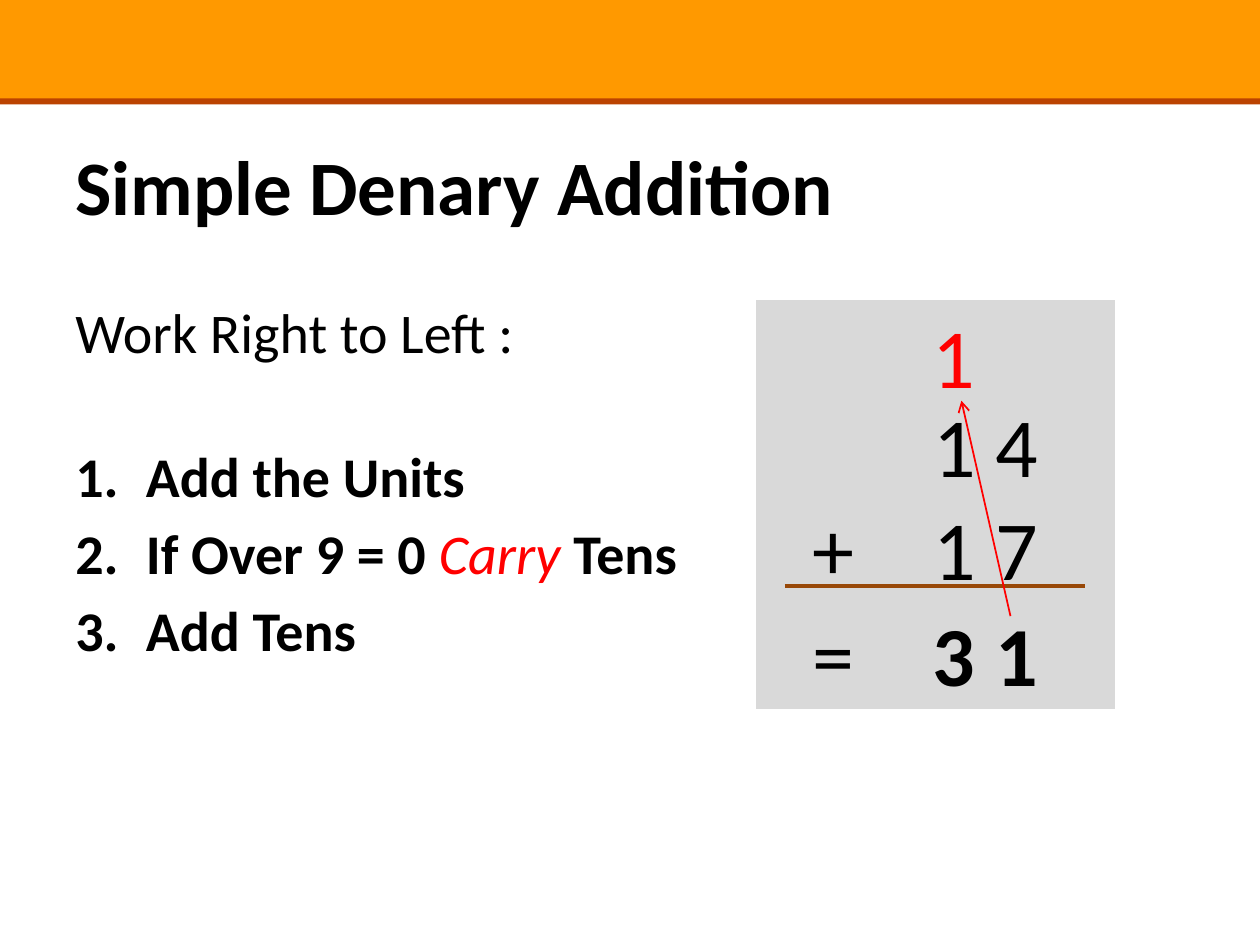
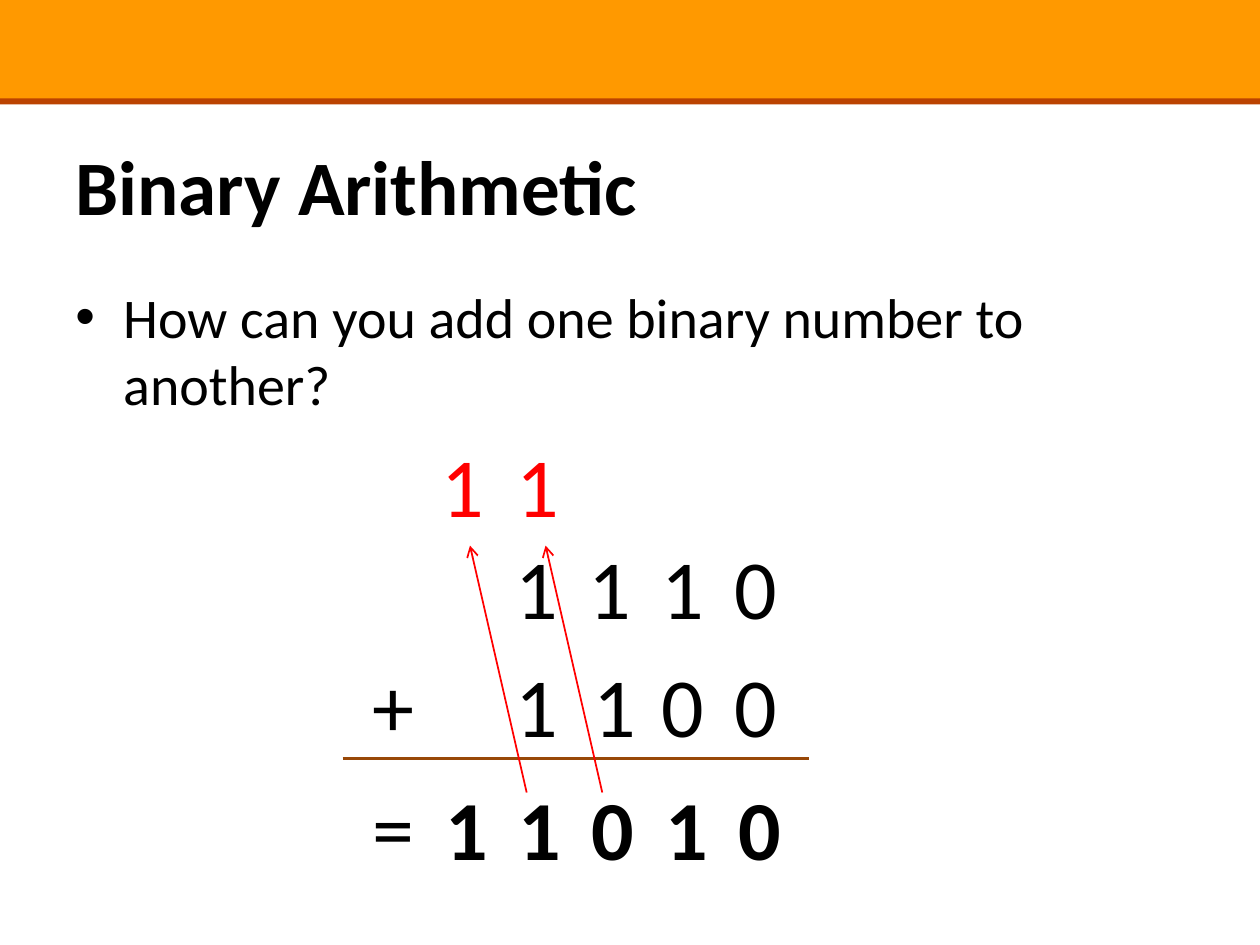
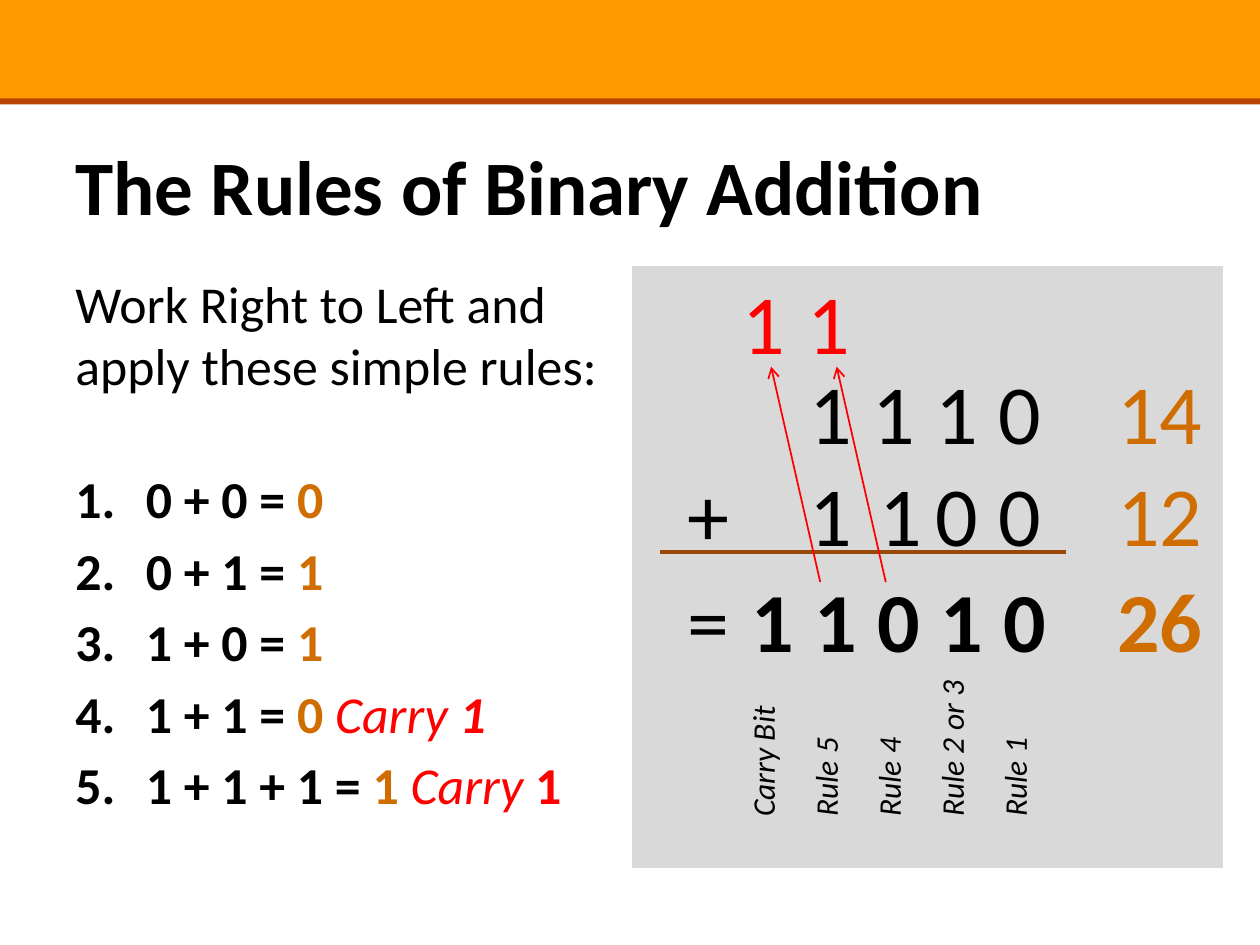
from dataclasses import dataclass

from lxml import etree
from pptx import Presentation
from pptx.dml.color import RGBColor
from pptx.enum import shapes, text
from pptx.oxml import ns
from pptx.util import Inches, Pt


@dataclass(frozen=True)
class Theme:
    font: str = "Calibri"
    black: str = "000000"
    red: str = "FF0000"
    amber: str = "D06D00"
    rule: str = "984807"
    panel: str = "D9D9D9"
    white: str = "FFFFFF"
    band: str = "FF9900"
    edge: str = "BB4301"
    title: float = 44
    body: float = 32
    small: float = 29.6
    digit: float = 48
    label: float = 18


T = Theme()

# Run styles: colour, bold, italic
PLAIN = (T.black, False, False)
BOLD = (T.black, True, False)
SLANT = (T.black, False, True)
SUM = (T.amber, True, False)
DENARY = (T.amber, False, False)
RED = (T.red, False, False)
CARRY = (T.red, False, True)
RED_BOLD = (T.red, True, False)
RED_BOTH = (T.red, True, True)


def style(run, size, look):
    font = run.font
    font.name, font.size = T.font, Pt(size)
    font.color.rgb = RGBColor.from_string(look[0])
    font.bold, font.italic = look[1:]


def box(slide, x, y, w, h, wrap=True):
    frame = slide.shapes.add_textbox(
        Inches(x), Inches(y), Inches(w), Inches(h)).text_frame
    frame.word_wrap = wrap
    if not wrap:
        frame.auto_size = text.MSO_AUTO_SIZE.SHAPE_TO_FIT_TEXT
    return frame


def rect(slide, x, y, w, h, fill, line=None):
    shape = slide.shapes.add_shape(
        shapes.MSO_SHAPE.RECTANGLE, Inches(x), Inches(y), Inches(w), Inches(h))
    shape.shadow.inherit = False
    shape.fill.solid()
    shape.fill.fore_color.rgb = RGBColor.from_string(fill)
    if line:
        shape.line.color.rgb = RGBColor.from_string(line)
        shape.line.width = Pt(2)
    else:
        shape.line.fill.background()


def line(slide, x1, y1, x2, y2, color, width):
    link = slide.shapes.add_connector(
        shapes.MSO_CONNECTOR.STRAIGHT,
        Inches(x1), Inches(y1), Inches(x2), Inches(y2))
    link.line.color.rgb = RGBColor.from_string(color)
    link.line.width = Pt(width)
    etree.SubElement(link._element.spPr, ns.qn("a:effectLst"))
    return link


def arrow(slide, x1, y1, x2, y2):
    link = line(slide, x1, y1, x2, y2, T.red, 1)
    etree.SubElement(link.line._get_or_add_ln(), ns.qn("a:tailEnd"), type="arrow")


def page(deck, title):
    """Blank slide with the shared band and title."""
    slide = deck.slides.add_slide(deck.slide_layouts[6])
    rect(slide, -0.04, 0.77, 10.06, 0.06, T.edge)
    rect(slide, -0.04, -0.01, 10.06, 0.79, T.band)
    frame = box(slide, 0.5, 1.05, 9, 1.25)
    frame.text = title
    style(frame.paragraphs[0].runs[0], T.title, BOLD)
    return slide


def mark(para, indent, tag, **attrs):
    """Hanging bullet or number."""
    props = para._p.get_or_add_pPr()
    props.set("marL", str(Inches(indent)))
    props.set("indent", str(-Inches(indent)))
    if tag == "a:buChar":
        etree.SubElement(props, ns.qn("a:buFont"), typeface="Arial")
    etree.SubElement(props, ns.qn(tag), **attrs)


def steps(slide, y, w, h, size, intro, items, gap):
    """Opening line followed by a numbered list."""
    frame = box(slide, 0.5, y, w, h)
    frame.text = intro
    first = frame.paragraphs[0]
    first.space_after = Pt(gap)
    style(first.runs[0], size, PLAIN)
    for item in items:
        para = frame.add_paragraph()
        para.space_before = Pt(size * 0.18)
        mark(para, 0.56, "a:buAutoNum", type="arabicPeriod")
        for words, look in item:
            run = para.add_run()
            run.text = words
            style(run, size, look)


def cell(slide, words, x, y, w, h, look=PLAIN):
    frame = box(slide, x, y, w, h, wrap=False)
    frame.text = words
    para = frame.paragraphs[0]
    para.alignment = text.PP_ALIGN.CENTER
    style(para.runs[0], T.digit, look)


def row(slide, digits, x, y, step, w, h, look=PLAIN):
    """Digits in equal columns; a space leaves its column free."""
    for i, digit in enumerate(digits):
        if digit != " ":
            cell(slide, digit, x + i * step, y, w, h, look)


def label(slide, words, x, base, length):
    """Label that reads upwards from its base."""
    frame = box(slide, x, base - length, 0.5, length, wrap=False)
    frame._txBody.bodyPr.set("vert", "vert270")
    frame.text = words
    style(frame.paragraphs[0].runs[0], T.label, SLANT)


def denary(deck):
    slide = page(deck, "Simple Denary Addition")
    steps(slide, 2.31, 5.13, 3.25, T.body, "Work Right to Left :", [
        [("Add the Units", BOLD)],
        [("If Over 9 = 0 ", BOLD), ("Carry", CARRY), (" Tens", BOLD)],
        [("Add Tens", BOLD)],
    ], 38)
    rect(slide, 5.99, 2.37, 2.87, 3.27, T.panel, T.white)
    row(slide, "14", 7.31, 3.07, 0.49, 0.54, 0.91)
    row(slide, "17", 7.31, 3.89, 0.49, 0.54, 0.91)
    row(slide, "31", 7.3, 4.73, 0.5, 0.54, 0.91, BOLD)
    cell(slide, "+", 6.35, 3.89, 0.45, 0.84)
    cell(slide, "=", 6.35, 4.73, 0.45, 0.84)
    line(slide, 6.23, 4.65, 8.61, 4.65, T.rule, 2.25)
    cell(slide, "1", 7.3, 2.37, 0.54, 0.91, RED)
    arrow(slide, 8.02, 4.89, 7.63, 3.18)


def binary(deck):
    slide = page(deck, "Binary Arithmetic")
    frame = box(slide, 0.5, 2.19, 9, 1.25)
    frame.text = "How can you add one binary number to another?"
    mark(frame.paragraphs[0], 0.38, "a:buChar", char="•")
    style(frame.paragraphs[0].runs[0], T.body, PLAIN)

    step = 0.58
    row(slide, "1110", 3.97, 4.2, step, 0.58, 0.97)
    row(slide, "1 00", 3.97, 5.14, step, 0.58, 0.97)
    cell(slide, "1", 4.61, 5.14, 0.46, 0.78)
    row(slide, "11010", 3.44, 6.11, step, 0.46, 0.78, BOLD)
    cell(slide, "+", 2.86, 5.14, 0.52, 0.97)
    cell(slide, "=", 2.86, 6.11, 0.52, 0.97)
    line(slide, 2.72, 6.02, 6.42, 6.02, T.rule, 2.25)
    row(slide, "11", 3.36, 3.39, 0.59, 0.63, 1.05, RED)
    for x in (4.18, 4.78):
        arrow(slide, x, 6.29, x - 0.45, 4.33)


def rules(deck):
    slide = page(deck, "The Rules of Binary Addition")
    intro = "Work Right to Left and apply these simple rules:"
    steps(slide, 2.11, 4.42, 4.95, T.small, intro, [
        [("0 + 0 = ", BOLD), ("0", SUM)],
        [("0 + 1 = ", BOLD), ("1", SUM)],
        [("1 + 0 = ", BOLD), ("1", SUM)],
        [("1 + 1 = ", BOLD), ("0 ", SUM), ("Carry ", CARRY), ("1", RED_BOTH)],
        [("1 + 1 + 1 = ", BOLD), ("1 ", SUM), ("Carry", CARRY), (" 1", RED_BOLD)],
    ], 35)
    rect(slide, 5, 2.1, 4.72, 4.8, T.panel, T.white)

    # Sum in binary
    step = 0.5
    row(slide, "1110", 6.33, 2.81, step, 0.51, 0.84)
    row(slide, "1 00", 6.33, 3.62, step, 0.51, 0.84)
    cell(slide, "1", 6.88, 3.62, 0.4, 0.67)
    row(slide, "11010", 5.87, 4.46, step, 0.4, 0.67, BOLD)
    cell(slide, "+", 5.36, 3.62, 0.45, 0.84)
    cell(slide, "=", 5.36, 4.46, 0.45, 0.84)
    line(slide, 5.24, 4.38, 8.46, 4.38, T.rule, 2.25)
    row(slide, "11", 5.79, 2.1, 0.52, 0.54, 0.91, RED)

    # Same sum in denary
    for value, y, look in (("14", 2.81, DENARY), ("12", 3.62, DENARY),
                           ("26", 4.46, SUM)):
        cell(slide, value, 8.76, y, 0.89, 0.91, look)

    # Rule used in each column
    names = (("Carry Bit", 0.98), ("Rule 5", 0.73), ("Rule 4", 0.73),
             ("Rule 2 or 3", 1.19), ("Rule 1", 0.73))
    for i, (name, length) in enumerate(names):
        label(slide, name, 5.85 + i * step, 6.58, length)
    for x in (6.51, 7.03):
        arrow(slide, x, 4.62, x - 0.39, 2.91)


def main():
    deck = Presentation()
    deck.slide_width, deck.slide_height = Inches(10), Inches(7.5)
    denary(deck)
    binary(deck)
    rules(deck)
    deck.save("out.pptx")


if __name__ == "__main__":
    main()
